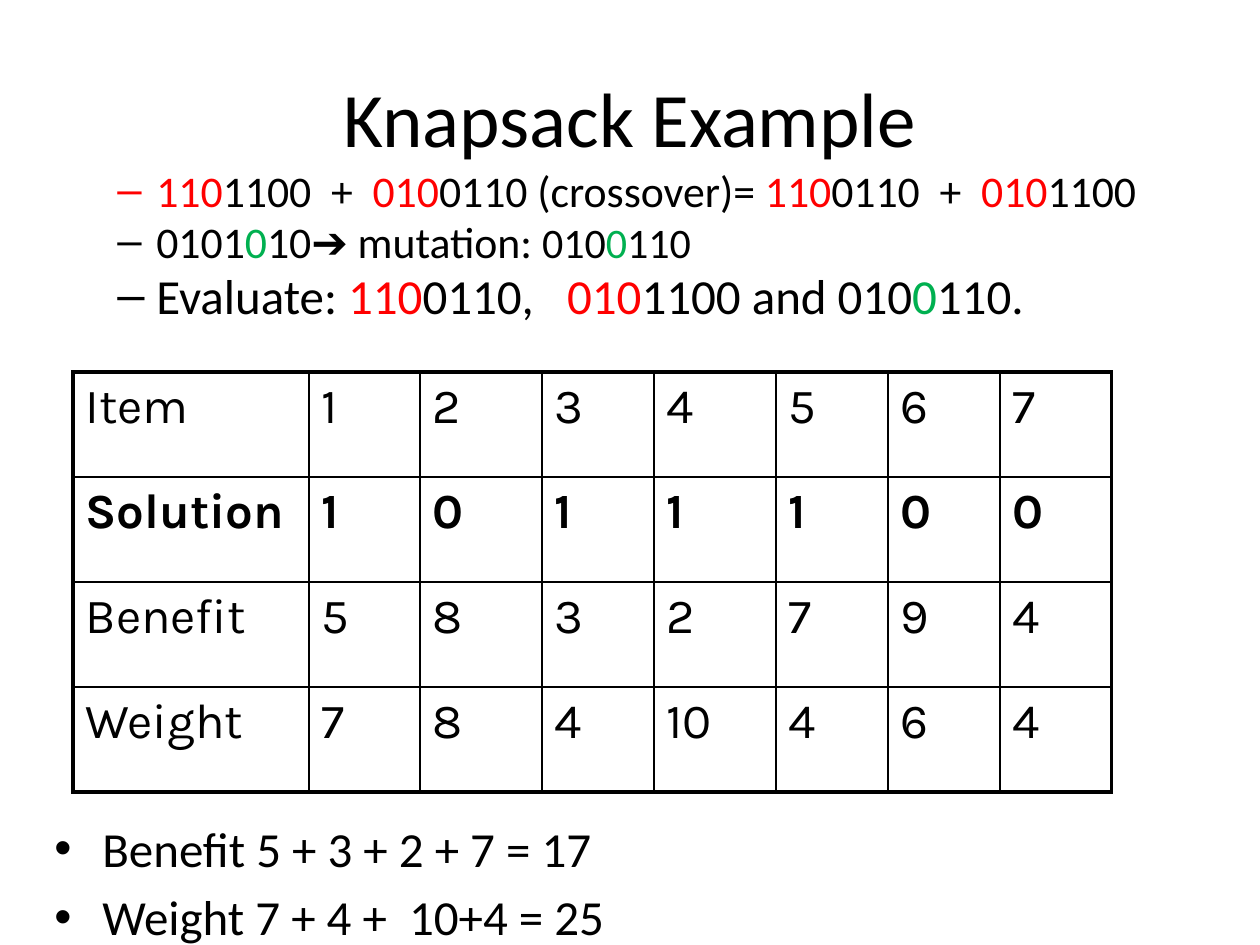
from pptx import Presentation, util as u
from pptx.dml.color import RGBColor
from pptx.enum import text as t
from pptx.oxml import parse_xml
from pptx.oxml.ns import nsdecls

BLACK = RGBColor(0x00, 0x00, 0x00)
RED = RGBColor(0xFF, 0x00, 0x00)
GREEN = RGBColor(0x00, 0xB0, 0x50)

# Content: each line is (size, runs); a run is (words, colour[, size])
TITLE = [("Knapsack Example", BLACK)]
STEPS = [
    (25, [("110", RED), ("1100  +  ", BLACK), ("010", RED),
          ("0110 (crossover)= ", BLACK), ("110", RED), ("0110  +  ", BLACK),
          ("010", RED), ("1100", BLACK)]),
    (25, [("0101", BLACK), ("0", GREEN), ("10➔ mutation: ", BLACK),
          ("010", BLACK, 24), ("0", GREEN, 24), ("110", BLACK, 24)]),
    (28, [("Evaluate: ", BLACK), ("110", RED), ("0110,   ", BLACK),
          ("010", RED), ("1100 and 010", BLACK), ("0", GREEN),
          ("110.", BLACK)]),
]
TOTALS = [
    (28, [("Benefit 5 + 3 + 2 + 7 = 17", BLACK)]),
    (28, [("Weight 7 + 4 +  10+4 = 25", BLACK)]),
]
ITEMS = [
    ("Item", 1, 2, 3, 4, 5, 6, 7),
    ("Solution", 1, 0, 1, 1, 1, 0, 0),
    ("Benefit", 5, 8, 3, 2, 7, 9, 4),
    ("Weight", 7, 8, 4, 10, 4, 6, 4),
]
COLS = [236, 111, 122, 112, 122, 112, 112, 112]
ROW = 105
THICK, THIN = 2.25, 1


def px(n):
    return u.Emu(round(n * 914400 / 126))


def write(para, runs, size, face="Calibri", bold=False):
    for words, hue, *own in runs:
        run = para.add_run()
        run.text = words
        font = run.font
        font.name, font.bold = face, bold
        font.size = u.Pt(own[0] if own else size)
        font.color.rgb = hue


def add_box(slide, x, y, w, h):
    frame = slide.shapes.add_textbox(px(x), px(y), px(w), px(h)).text_frame
    frame.word_wrap = True
    return frame


def add_list(frame, lines, mark, left, hang, pitch):
    for i, (size, runs) in enumerate(lines):
        para = frame.add_paragraph() if i else frame.paragraphs[0]
        para.line_spacing = pitch
        para.space_before = u.Pt(size / 5)
        props = para._p.get_or_add_pPr()
        props.set("marL", str(px(left)))
        props.set("indent", str(-px(hang)))
        props.append(parse_xml(
            f'<a:buFont {nsdecls("a")} typeface="Arial"/>'))
        props.append(parse_xml(
            f'<a:buChar {nsdecls("a")} char="{mark}"/>'))
        write(para, runs, size)


def set_edges(cell, widths):
    props = cell._tc.get_or_add_tcPr()
    for i, (side, width) in enumerate(zip("LRTB", widths)):
        props.insert(i, parse_xml(
            f'<a:ln{side} {nsdecls("a")} w="{u.Pt(width)}"><a:solidFill>'
            f'<a:srgbClr val="{BLACK}"/></a:solidFill></a:ln{side}>'))


def add_grid(slide, x, y):
    rows, cols = len(ITEMS), len(COLS)
    grid = slide.shapes.add_table(
        rows, cols, px(x), px(y), px(sum(COLS)), px(ROW * rows)).table
    grid.first_row = grid.horz_banding = False
    for col, width in zip(grid.columns, COLS):
        col.width = px(width)
    for r, values in enumerate(ITEMS):
        grid.rows[r].height = px(ROW)
        for c, value in enumerate(values):
            cell = grid.cell(r, c)
            cell.fill.background()
            outer = (c == 0, c == cols - 1, r == 0, r == rows - 1)
            set_edges(cell, [THICK if edge else THIN for edge in outer])
            para = cell.text_frame.paragraphs[0]
            para.space_before = u.Pt(5.6)
            write(para, [(str(value), BLACK)], 28, "Karla",
                  bold=values[0] == "Solution")


def main():
    deck = Presentation()
    deck.slide_width, deck.slide_height = u.Inches(10), u.Inches(7.5)
    slide = deck.slides.add_slide(deck.slide_layouts[6])

    # Title
    frame = add_box(slide, 63, 38, 1134, 157)
    frame.vertical_anchor = t.MSO_ANCHOR.MIDDLE
    head = frame.paragraphs[0]
    head.alignment = t.PP_ALIGN.CENTER
    write(head, TITLE, 44)

    # Genetic steps, item table, totals
    add_list(add_box(slide, 42, 168, 1144, 170), STEPS, "–", 102, 39, 0.8)
    add_grid(slide, 73, 372)
    add_list(add_box(slide, 42, 812, 1144, 132), TOTALS, "•", 48, 48, 1)

    deck.save("out.pptx")


if __name__ == "__main__":
    main()
